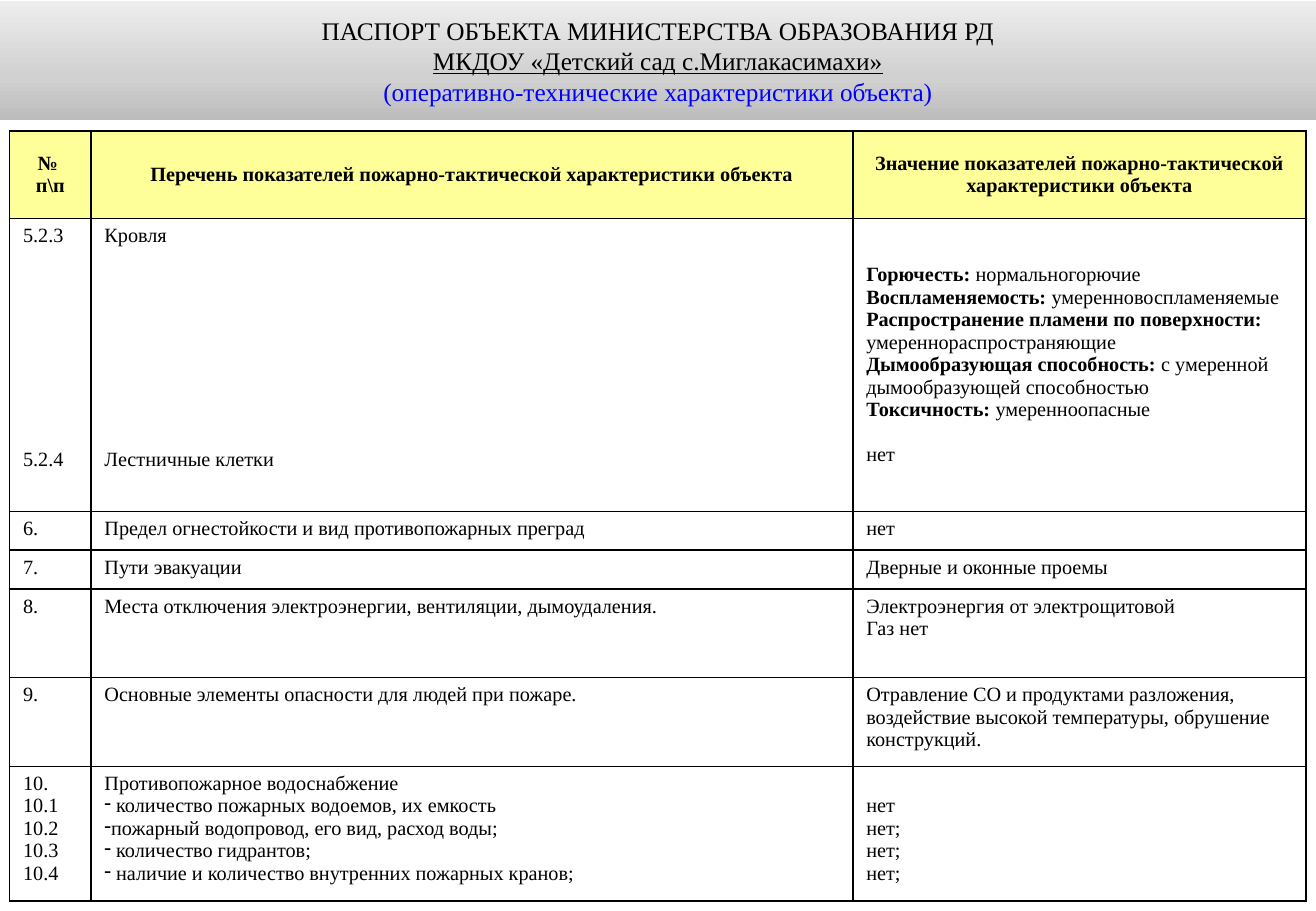
"""Build the fire-safety passport slide: a gradient title band above a table of indicators."""
from copy import deepcopy

from lxml import etree
from pptx import Presentation
from pptx.dml.color import RGBColor
from pptx.enum.shapes import MSO_SHAPE
from pptx.enum.text import MSO_ANCHOR, PP_ALIGN
from pptx.oxml.ns import qn
from pptx.util import Inches, Pt

RECTANGLE = MSO_SHAPE.RECTANGLE
TOP, MIDDLE = MSO_ANCHOR.TOP, MSO_ANCHOR.MIDDLE
LEFT, CENTER = PP_ALIGN.LEFT, PP_ALIGN.CENTER

COLORS = {
    "text": "000000", "subtitle": "0000FF", "border": "000000",
    "header": "FFFF99", "body": "FFFFFF",
    "band_bottom": "BCBCBC", "band_middle": "D0D0D0", "band_top": "EDEDED",
}
FONT = "Times New Roman"
LINE = 13.28

TITLE = [
    ("ПАСПОРТ ОБЪЕКТА МИНИСТЕРСТВА ОБРАЗОВАНИЯ РД", "text", False),
    ("МКДОУ «Детский сад с.Миглакасимахи»", "text", True),
    ("(оперативно-технические характеристики объекта)", "subtitle", False),
]
COLUMN_WIDTHS = [0.67, 6.27, 3.73]
ROW_HEIGHTS = [0.72, 2.41, 0.32, 0.32, 0.73, 0.73, 1.11]

# Whole numbers are skipped lines; pairs are a bold label and its value.
ROWS = [
    [["№ ", "п\\п"],
     ["Перечень показателей пожарно-тактической характеристики объекта"],
     ["Значение показателей пожарно-тактической характеристики объекта"]],
    [["5.2.3", 9, "5.2.4"],
     ["Кровля", 9, "Лестничные клетки"],
     [("Горючесть: ", "нормальногорючие"),
      ("Воспламеняемость: ", "умеренновоспламеняемые"),
      ("Распространение пламени по поверхности:", ""),
      "умереннораспространяющие",
      ("Дымообразующая способность: ", "с умеренной дымообразующей способностью"),
      ("Токсичность: ", "умеренноопасные"),
      1, "нет"]],
    [["6."], ["Предел огнестойкости и вид противопожарных преград"], ["нет"]],
    [["7."], ["Пути эвакуации"], ["Дверные и оконные проемы"]],
    [["8."],
     ["Места отключения электроэнергии, вентиляции, дымоудаления."],
     ["Электроэнергия от электрощитовой", "Газ нет"]],
    [["9."],
     ["Основные элементы опасности для людей при пожаре."],
     ["Отравление СО и продуктами разложения, воздействие высокой температуры, "
      "обрушение конструкций."]],
    [["10.", "10.1", "10.2", "10.3", "10.4"],
     ["Противопожарное водоснабжение",
      "- количество пожарных водоемов, их емкость",
      "-пожарный водопровод, его вид, расход воды;",
      "- количество гидрантов;",
      "- наличие и количество внутренних пожарных кранов;"],
     [1, "нет", "нет;", "нет;", "нет;"]],
]


def style(font, size, color):
    font.name = FONT
    font.size = Pt(size)
    font.color.rgb = RGBColor.from_string(COLORS[color])


def fill_cell(cell, lines, is_header):
    cell.margin_left = cell.margin_right = Inches(0.11)
    cell.margin_top = cell.margin_bottom = Inches(0.05)
    has_labels = any(isinstance(line, tuple) for line in lines)
    cell.vertical_anchor = MIDDLE if is_header or has_labels else TOP
    properties = cell._tc.get_or_add_tcPr()
    for side in ("a:lnL", "a:lnR", "a:lnT", "a:lnB"):
        edge = etree.SubElement(properties, qn(side), w=str(Pt(1)))
        solid = etree.SubElement(edge, qn("a:solidFill"))
        etree.SubElement(solid, qn("a:srgbClr"), val=COLORS["border"])
    cell.fill.solid()
    cell.fill.fore_color.rgb = RGBColor.from_string(COLORS["header" if is_header else "body"])

    para, skipped = None, 0
    for line in lines:
        if isinstance(line, int):
            skipped = line
            continue
        if para is None:
            para = cell.text_frame.paragraphs[0]
            cell.margin_top += Pt(skipped * LINE)
        else:
            para = cell.text_frame.add_paragraph()
            if skipped:
                para.space_before = Pt(skipped * LINE)
        skipped = 0
        para.alignment = CENTER if is_header else LEFT
        if isinstance(line, tuple):
            for text, bold in zip(line, (True, False)):
                if text:
                    span = para.add_run()
                    span.text = text
                    span.font.bold = bold
        else:
            if line.startswith("-"):
                etree.SubElement(para._p.get_or_add_pPr(), qn("a:buChar"), char="-")
            para.add_run().text = line.removeprefix("-")
            para.font.bold = is_header
        style(para.font, 12, "text")


deck = Presentation()
deck.slide_width, deck.slide_height = Inches(10.83), Inches(7.5)
page = deck.slides.add_slide(deck.slide_layouts[6])

frame = page.shapes.add_table(
    len(ROWS), len(COLUMN_WIDTHS), Inches(0.08), Inches(1.08),
    Inches(sum(COLUMN_WIDTHS)), Inches(sum(ROW_HEIGHTS)))
table = frame.table
table.first_row = table.horz_banding = False
for column, width in zip(table.columns, COLUMN_WIDTHS):
    column.width = Inches(width)
for index, (row, height) in enumerate(zip(table.rows, ROW_HEIGHTS)):
    row.height = Inches(height)
    for cell, lines in zip(row.cells, ROWS[index]):
        fill_cell(cell, lines, index == 0)

band = page.shapes.add_shape(RECTANGLE, 0, Inches(0.01), deck.slide_width, Inches(0.98))
band.shadow.inherit = False
band.line.fill.background()
band.fill.gradient()
band.fill.gradient_angle = 90
first_stop = band._element.spPr.find(".//" + qn("a:gs"))
first_stop.addnext(deepcopy(first_stop))
for stop, position, color in zip(band.fill.gradient_stops, (0, 0.35, 1),
                                 ("band_bottom", "band_middle", "band_top")):
    stop.position = position
    stop.color.rgb = RGBColor.from_string(COLORS[color])

title = band.text_frame
title.word_wrap = True
title.vertical_anchor = MIDDLE
title.margin_left = title.margin_right = Inches(0.09)
title.margin_top = title.margin_bottom = Inches(0.05)
for index, (text, color, underline) in enumerate(TITLE):
    para = title.add_paragraph() if index else title.paragraphs[0]
    para.alignment = CENTER
    para.add_run().text = text
    style(para.font, 15, color)
    para.font.underline = underline

deck.save("out.pptx")
